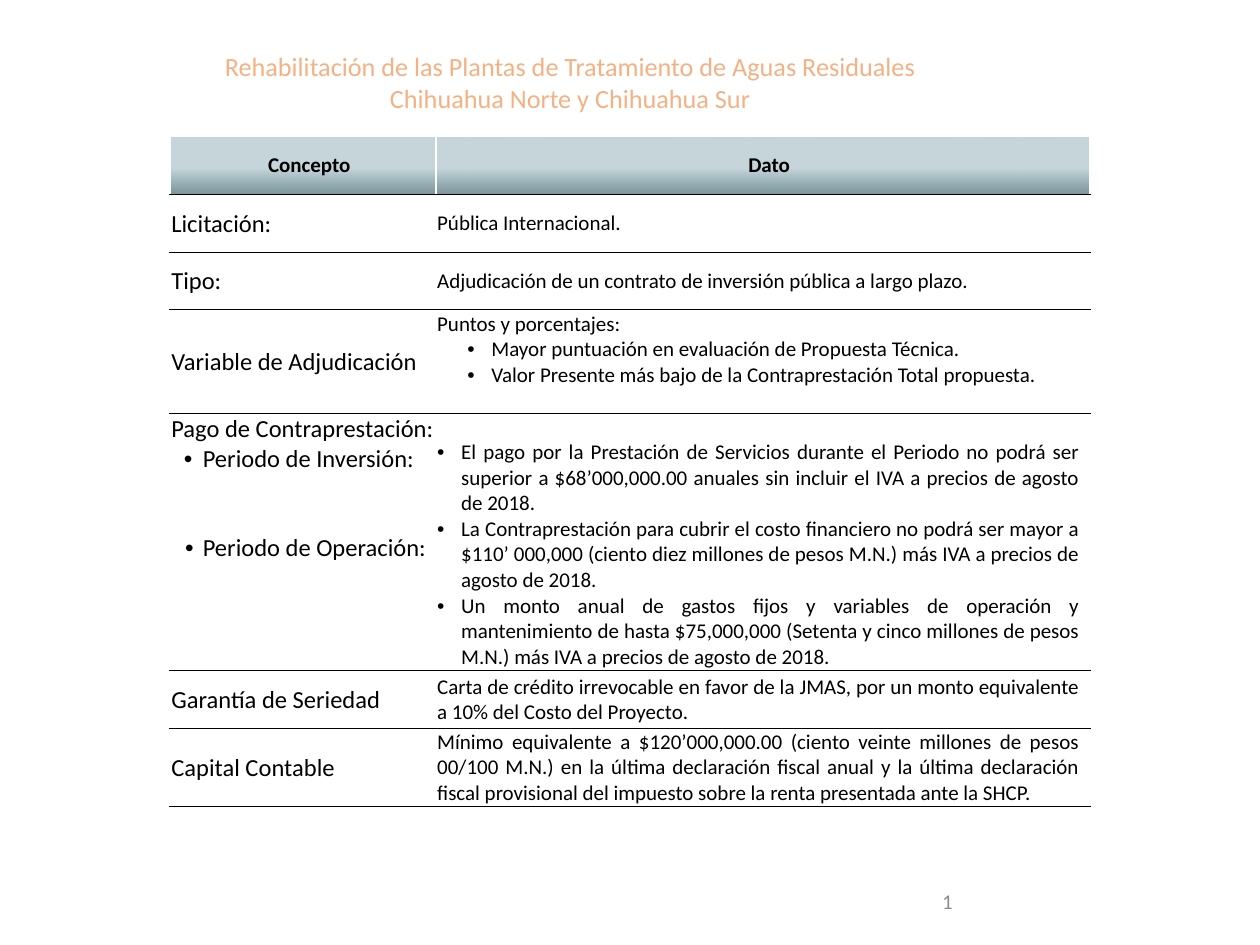
from dataclasses import dataclass

from lxml.etree import SubElement
from pptx import Presentation
from pptx.dml.color import RGBColor
from pptx.enum.text import MSO_ANCHOR, PP_ALIGN
from pptx.oxml.ns import qn
from pptx.util import Inches, Pt


@dataclass(frozen=True)
class Theme:
    font: str = "Calibri"
    title_color: str = "F4B183"
    text_color: str = "000000"
    number_color: str = "8C8C8C"
    side_border: str = "FFFFFF"
    header_stops: tuple = ((0, "5E7A83", 81), (45, "3E7381", 29))
    title_size: int = 15
    label_size: int = 14
    body_size: int = 12


@dataclass
class Line:
    text: str
    align: PP_ALIGN = PP_ALIGN.LEFT
    indent: float = 0
    hanging: float = 0
    before: float = 0


JUSTIFY = PP_ALIGN.JUSTIFY
CENTER = PP_ALIGN.CENTER


def bullet(text, indent=0.19, hanging=0.19, **options):
    return Line(text, indent=indent, hanging=hanging, **options)


def write_text(frame, lines, font, size, color, bold=False):
    for index, line in enumerate(lines):
        paragraph = frame.paragraphs[0] if index == 0 else frame.add_paragraph()
        paragraph.alignment = line.align
        properties = paragraph._p.get_or_add_pPr()
        properties.set("marL", str(Inches(line.indent)))
        properties.set("indent", str(-Inches(line.hanging)))
        if line.hanging:
            SubElement(properties, qn("a:buFont"), typeface="Arial")
            SubElement(properties, qn("a:buChar"), char="•")
        if line.before:
            paragraph.space_before = Pt(line.before)
        run = paragraph.add_run()
        run.text = line.text
        run.font.name = font
        run.font.size = Pt(size)
        run.font.bold = bold
        run.font.color.rgb = RGBColor.from_string(color)


class SlideBuilder:
    def __init__(self, slide, theme):
        self.slide = slide
        self.theme = theme

    def text_box(self, box, lines, size, color, anchor=MSO_ANCHOR.TOP):
        shape = self.slide.shapes.add_textbox(*map(Inches, box))
        frame = shape.text_frame
        frame.word_wrap = True
        frame.vertical_anchor = anchor
        write_text(frame, lines, self.theme.font, size, color)

    def table(self, left, top, widths, heights, rows):
        table = self.slide.shapes.add_table(
            len(heights), len(widths), Inches(left), Inches(top),
            Inches(sum(widths)), Inches(sum(heights))).table
        table.first_row = False
        table.horz_banding = False
        for column, width in zip(table.columns, widths):
            column.width = Inches(width)
        for row, height in zip(table.rows, heights):
            row.height = Inches(height)
        for row_index, row in enumerate(rows):
            for column_index, content in enumerate(row):
                self.cell(table.cell(row_index, column_index), content,
                          row_index == 0, column_index == 0)

    def cell(self, cell, content, header, label, right_margin=0.08):
        lines, anchor, top_margin = content
        cell.margin_left = Inches(0.01)
        cell.margin_right = Inches(0.01 if header or label else right_margin)
        cell.margin_top = Inches(top_margin)
        cell.margin_bottom = 0
        cell.vertical_anchor = anchor
        size = self.theme.label_size if label and not header else self.theme.body_size
        write_text(cell.text_frame, lines, self.theme.font, size,
                   self.theme.text_color, bold=header)
        self.borders(cell, header)
        if header:
            self.header_fill(cell)
        else:
            cell.fill.background()

    def borders(self, cell, header):
        side = (self.theme.side_border, 1)
        rule = (self.theme.text_color, 0.5)
        edges = {"lnL": side, "lnR": side, "lnT": side if header else rule, "lnB": rule}
        properties = cell._tc.get_or_add_tcPr()
        for tag, (color, width) in edges.items():
            border = SubElement(properties, qn(f"a:{tag}"), w=str(Pt(width)))
            fill = SubElement(border, qn("a:solidFill"))
            SubElement(fill, qn("a:srgbClr"), val=color)

    def header_fill(self, cell):
        gradient = SubElement(cell._tc.get_or_add_tcPr(), qn("a:gradFill"))
        stops = SubElement(gradient, qn("a:gsLst"))
        for position, color, opacity in self.theme.header_stops:
            stop = SubElement(stops, qn("a:gs"), pos=str(position * 1000))
            value = SubElement(stop, qn("a:srgbClr"), val=color)
            SubElement(value, qn("a:alpha"), val=str(opacity * 1000))
        SubElement(gradient, qn("a:lin"), ang=str(270 * 60000), scaled="0")


def content(*lines, anchor=MSO_ANCHOR.MIDDLE, top_margin=0.01):
    return lines, anchor, top_margin


ROWS = [
    (content(Line("Concepto", CENTER, 0.1)), content(Line("Dato", CENTER, 0.1))),
    (content(Line("Licitación:")), content(Line("Pública Internacional."))),
    (content(Line("Tipo:")),
     content(Line("Adjudicación de un contrato de inversión pública a largo plazo.", JUSTIFY))),
    (content(Line("Variable de Adjudicación")),
     content(
         Line("Puntos y porcentajes:"),
         bullet("Mayor puntuación en evaluación de Propuesta Técnica.", indent=0.43),
         bullet("Valor Presente más bajo de la Contraprestación Total propuesta.", indent=0.43),
         anchor=MSO_ANCHOR.TOP)),
    (content(
        Line("Pago de Contraprestación:"),
        bullet("Periodo de Inversión:", 0.25, 0.15),
        bullet("Periodo de Operación:", 0.25, 0.14, before=34),
        anchor=MSO_ANCHOR.TOP),
     content(
         bullet("El pago por la Prestación de Servicios durante el Periodo no podrá ser "
                "superior a $68’000,000.00 anuales sin incluir el IVA a precios de agosto "
                "de 2018.", align=JUSTIFY),
         bullet("La Contraprestación para cubrir el costo financiero no podrá ser mayor a "
                "$110’ 000,000 (ciento diez millones de pesos M.N.) más IVA a precios de "
                "agosto de 2018.", align=JUSTIFY),
         bullet("Un monto anual de gastos fijos y variables de operación y mantenimiento "
                "de hasta $75,000,000 (Setenta y cinco millones de pesos M.N.) más IVA a "
                "precios de agosto de 2018.", align=JUSTIFY),
         anchor=MSO_ANCHOR.TOP, top_margin=0.21)),
    (content(Line("Garantía de Seriedad")),
     content(Line("Carta de crédito irrevocable en favor de la JMAS, por un monto "
                  "equivalente a 10% del Costo del Proyecto.", JUSTIFY))),
    (content(Line("Capital Contable")),
     content(Line("Mínimo equivalente a $120’000,000.00 (ciento veinte millones de pesos "
                  "00/100 M.N.) en la última declaración fiscal anual y la última "
                  "declaración fiscal provisional del impuesto sobre la renta presentada "
                  "ante la SHCP.", JUSTIFY))),
]


def main():
    presentation = Presentation()
    presentation.slide_width = Inches(10)
    presentation.slide_height = Inches(7.5)
    theme = Theme()
    builder = SlideBuilder(
        presentation.slides.add_slide(presentation.slide_layouts[6]), theme)
    title = [
        Line("Rehabilitación de las Plantas de Tratamiento de Aguas Residuales", CENTER),
        Line("Chihuahua Norte y Chihuahua Sur", CENTER),
    ]
    builder.text_box((0.99, 0.35, 7.07, 0.71), title, theme.title_size, theme.title_color)
    builder.table(1.35, 1.08, (2.11, 5.19),
                  (0.46, 0.46, 0.46, 0.82, 2.04, 0.46, 0.62), ROWS)
    builder.text_box((5.41, 6.95, 2.25, 0.4), [Line("1", PP_ALIGN.RIGHT)],
                     theme.body_size, theme.number_color, MSO_ANCHOR.MIDDLE)
    presentation.save("out.pptx")


if __name__ == "__main__":
    main()
